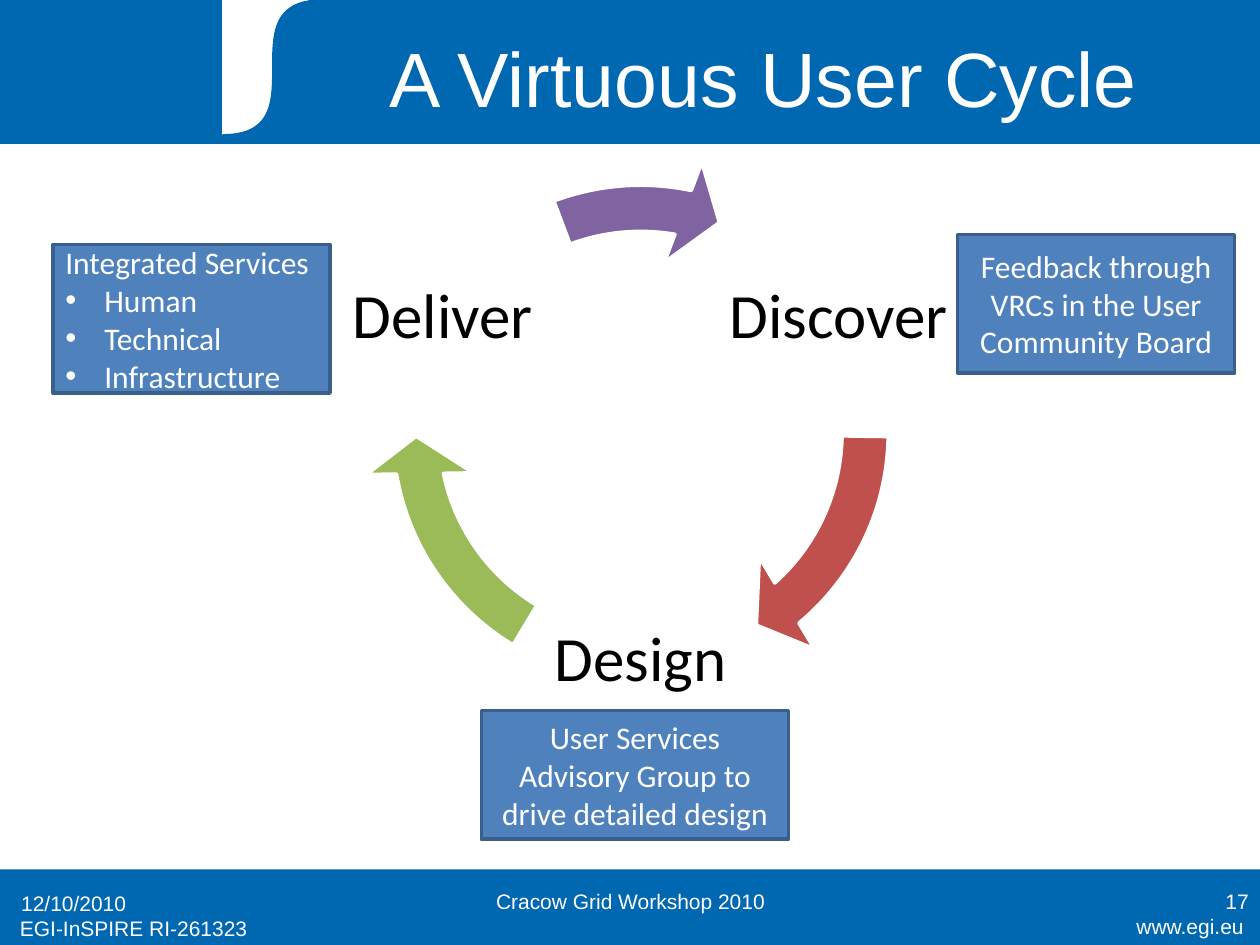
import pptx
import pptx.util
import pptx.dml.color
import pptx.enum.shapes
import pptx.enum.text
import lxml.etree
from pptx.oxml.ns import qn

Inches = pptx.util.Inches
Pt = pptx.util.Pt
RGBColor = pptx.dml.color.RGBColor
MSO_SHAPE = pptx.enum.shapes.MSO_SHAPE
PP_ALIGN = pptx.enum.text.PP_ALIGN
MSO_ANCHOR = pptx.enum.text.MSO_ANCHOR

BAND_BLUE = RGBColor(0x00, 0x67, 0xB1)
BOX_BLUE = RGBColor(0x4F, 0x81, 0xBD)
BOX_EDGE = RGBColor(0x3A, 0x5F, 0x8C)
RED = RGBColor(0xC0, 0x50, 0x4D)
GREEN = RGBColor(0x9B, 0xBB, 0x59)
PURPLE = RGBColor(0x80, 0x64, 0xA2)
WHITE = RGBColor(0xFF, 0xFF, 0xFF)
BLACK = RGBColor(0x00, 0x00, 0x00)


def bezier(start, control_1, control_2, end, steps=40):
    """Return points on a cubic curve, without its start."""
    points = []
    for step in range(1, steps + 1):
        t = step / steps
        weights = ((1 - t) ** 3, 3 * t * (1 - t) ** 2, 3 * t * t * (1 - t), t ** 3)
        corners = (start, control_1, control_2, end)
        points.append(tuple(sum(w * c[axis] for w, c in zip(weights, corners))
                            for axis in (0, 1)))
    return points


class SlideBuilder:
    heading_font = "Arial"
    diagram_font = "Calibri"

    def __init__(self, slide):
        self.slide = slide

    def paint(self, shape, fill, edge=None, edge_width=0.75):
        shape.shadow.inherit = False
        shape.fill.solid()
        shape.fill.fore_color.rgb = fill
        if edge is None:
            shape.line.fill.background()
        else:
            shape.line.color.rgb = edge
            shape.line.width = Pt(edge_width)
        return shape

    def preset(self, kind, area, fill, edge=None, edge_width=0.75):
        shape = self.slide.shapes.add_shape(kind, *map(Inches, area))
        return self.paint(shape, fill, edge, edge_width)

    def outline(self, points, fill):
        builder = self.slide.shapes.build_freeform(
            Inches(points[0][0]), Inches(points[0][1]))
        builder.add_line_segments(
            [(Inches(x), Inches(y)) for x, y in points[1:]], close=True)
        return self.paint(builder.convert_to_shape(), fill, fill)

    def add_words(self, paragraph, text, font, size, color, align):
        paragraph.alignment = align
        run = paragraph.add_run()
        run.text = text
        run.font.name = font
        run.font.size = Pt(size)
        run.font.color.rgb = color

    def frame(self, shape, anchor=MSO_ANCHOR.MIDDLE):
        text_frame = shape.text_frame
        text_frame.word_wrap = True
        text_frame.auto_size = pptx.enum.text.MSO_AUTO_SIZE.NONE
        text_frame.vertical_anchor = anchor
        return text_frame

    def title(self, text, area):
        heading = self.slide.shapes.title
        heading.left, heading.top, heading.width, heading.height = map(Inches, area)
        self.add_words(self.frame(heading).paragraphs[0], text,
                       self.heading_font, 44, WHITE, PP_ALIGN.CENTER)
        # Bring the title in front of the header band.
        heading.element.getparent().append(heading.element)

    def footer(self, text, area, align, anchor=MSO_ANCHOR.MIDDLE):
        note = self.slide.shapes.add_textbox(*map(Inches, area))
        self.add_words(self.frame(note, anchor).paragraphs[0], text,
                       self.heading_font, 12, WHITE, align)

    def stage(self, text, left, top, side=1.87):
        label = self.slide.shapes.add_textbox(*map(Inches, (left, top, side, side)))
        text_frame = self.frame(label)
        text_frame.margin_left = text_frame.margin_right = Inches(0.05)
        paragraph = text_frame.paragraphs[0]
        paragraph.line_spacing = 0.9
        self.add_words(paragraph, text, self.diagram_font, 36, BLACK, PP_ALIGN.CENTER)

    def cycle_arrow(self, end, start, color):
        """Draw an arc of the cycle; angles are in units of 100000/60000 degrees."""
        arrow = self.preset(MSO_SHAPE.CIRCULAR_ARROW, (2.88, 1.23, 4.41, 4.41),
                            color, WHITE, 2)
        for index, value in enumerate((0.083, 5.766, end, start, 0.096)):
            arrow.adjustments[index] = value

    def box(self, area, text, bullets=(), align=PP_ALIGN.CENTER):
        card = self.preset(MSO_SHAPE.RECTANGLE, area, BOX_BLUE, BOX_EDGE, 2)
        text_frame = self.frame(card)
        self.add_words(text_frame.paragraphs[0], text,
                       self.diagram_font, 18, WHITE, align)
        for item in bullets:
            paragraph = text_frame.add_paragraph()
            self.bullet(paragraph)
            self.add_words(paragraph, item, self.diagram_font, 18, WHITE, align)

    def bullet(self, paragraph):
        properties = paragraph._p.get_or_add_pPr()
        properties.set("marL", str(Inches(0.31)))
        properties.set("indent", str(-Inches(0.31)))
        lxml.etree.SubElement(properties, qn("a:buFont")).set("typeface", "Arial")
        lxml.etree.SubElement(properties, qn("a:buChar")).set("char", "•")


def main():
    deck = pptx.Presentation()
    deck.slide_width, deck.slide_height = Inches(10), Inches(7.5)
    page = SlideBuilder(deck.slides.add_slide(deck.slide_layouts[5]))

    page.preset(MSO_SHAPE.RECTANGLE, (0, 6.9, 10, 0.6), BAND_BLUE)
    page.preset(MSO_SHAPE.RECTANGLE, (0, 0, 10, 1.14), BAND_BLUE, BAND_BLUE)
    page.preset(MSO_SHAPE.RECTANGLE, (1.77, 0, 1.97, 1.07), WHITE, WHITE)
    swoosh = bezier((1.77, 1.07), (2.56, 1.07), (1.77, 0), (2.56, 0))
    page.outline([(3.74, 0), (3.74, 1.07), (1.77, 1.07)] + swoosh, BAND_BLUE)
    page.title("A Virtuous User Cycle", (2.32, 0.13, 7.48, 0.95))

    page.stage("Discover", 5.72, 1.59)
    page.cycle_arrow(29.614, 0.533, RED)
    page.stage("Design", 4.15, 4.31)
    page.cycle_arrow(101.7, 72.619, GREEN)
    page.stage("Deliver", 2.58, 1.59)
    page.cycle_arrow(168.545, 149.689, PURPLE)

    page.box((0.42, 1.94, 2.2, 1.18), "Integrated Services",
             ("Human", "Technical", "Infrastructure"), PP_ALIGN.LEFT)
    page.box((7.6, 1.86, 2.2, 1.1), "Feedback through VRCs in the User Community Board")
    page.box((3.82, 5.64, 2.44, 1.02),
             "User Services Advisory Group to drive detailed design")

    page.footer("12/10/2010", (0.07, 6.97, 2.33, 0.4), PP_ALIGN.LEFT)
    page.footer("Cracow Grid Workshop 2010", (3.42, 6.95, 3.17, 0.4), PP_ALIGN.CENTER)
    page.footer("17", (7.68, 6.95, 2.33, 0.4), PP_ALIGN.RIGHT)
    page.footer("EGI-InSPIRE RI-261323", (0.06, 7.22, 2.5, 0.31),
                PP_ALIGN.LEFT, MSO_ANCHOR.TOP)
    page.footer("www.egi.eu", (8.39, 7.2, 1.58, 0.31), PP_ALIGN.RIGHT, MSO_ANCHOR.TOP)

    deck.save("out.pptx")


if __name__ == "__main__":
    main()
